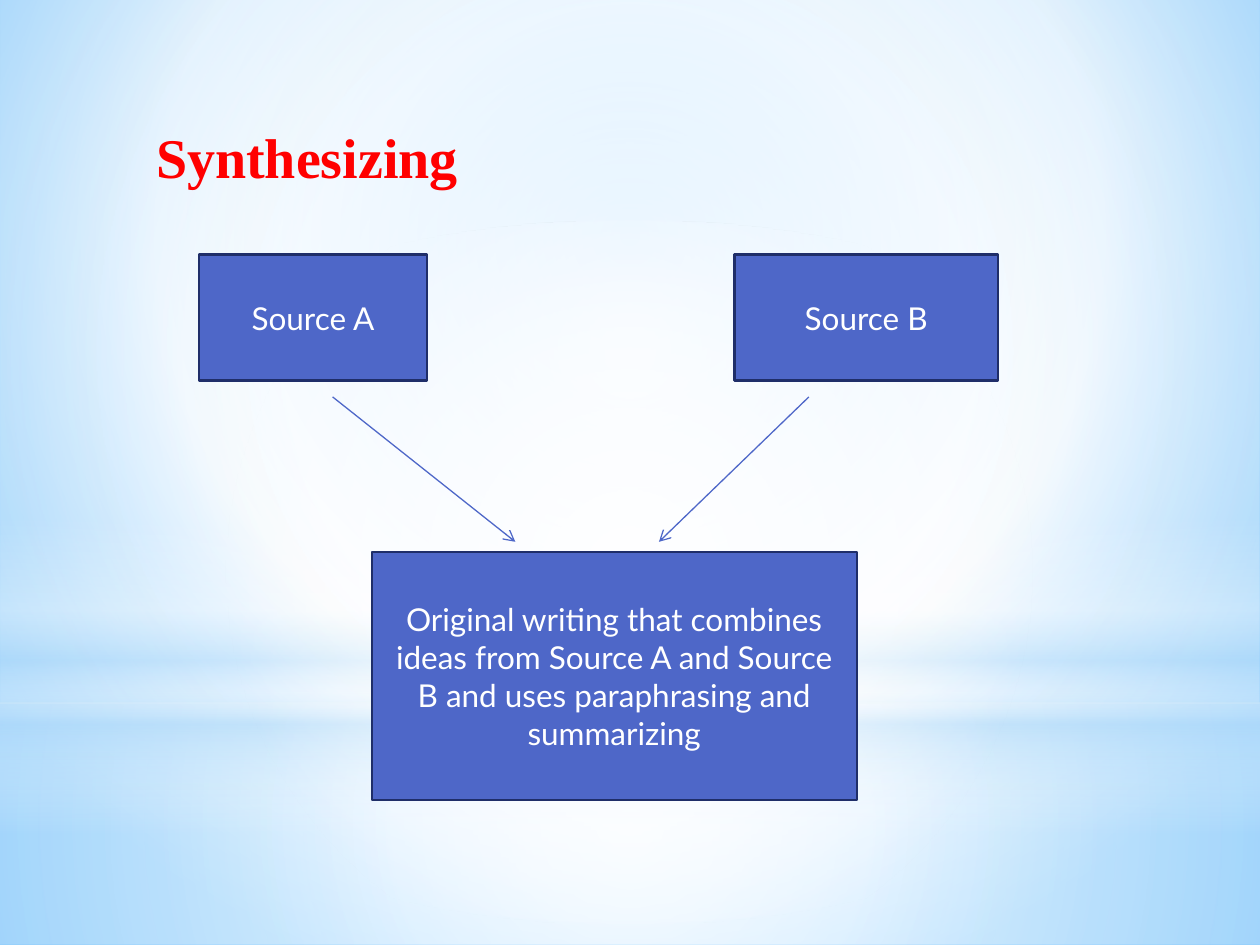
from typing import NamedTuple

from lxml.etree import SubElement
from pptx import Presentation
from pptx.dml.color import RGBColor
from pptx.dml.fill import FillFormat
from pptx.enum.shapes import MSO_CONNECTOR, MSO_SHAPE
from pptx.enum.text import MSO_ANCHOR, MSO_AUTO_SIZE, PP_ALIGN
from pptx.oxml.ns import qn
from pptx.slide import Slide
from pptx.text.text import TextFrame
from pptx.util import Pt

WIDTH, HEIGHT = 720, 540
WHITE = RGBColor(0xFF, 0xFF, 0xFF)
RED = RGBColor(0xFF, 0x00, 0x00)
INDIGO = RGBColor(0x4E, 0x67, 0xC8)
NAVY = RGBColor(0x1F, 0x2E, 0x69)
PALE_BLUE = RGBColor(0xB4, 0xDC, 0xFA)
SKY_BLUE = RGBColor(0x9E, 0xD5, 0xFF)
DEEP_SKY = RGBColor(0x5B, 0xB9, 0xFF)


class Stop(NamedTuple):
    position: int
    color: RGBColor
    opacity: int = 100


class Gradient(NamedTuple):
    stops: list[Stop]
    focus: tuple[int, int, int, int] | None = (50, 50, 50, 50)


class Glow(NamedTuple):
    kind: MSO_SHAPE
    top: float
    height: float
    gradient: Gradient


class Box(NamedTuple):
    text: str
    left: float
    top: float
    width: float
    height: float


class Arrow(NamedTuple):
    start_x: float
    start_y: float
    end_x: float
    end_y: float


BACKGROUND = Gradient(
    [Stop(0, SKY_BLUE), Stop(60, WHITE), Stop(100, DEEP_SKY)], (20, 10, 20, 60)
)
GLOWS = [
    Glow(MSO_SHAPE.RECTANGLE, 401.76, 138.24, Gradient(
        [Stop(0, WHITE, 91), Stop(37, WHITE, 76), Stop(100, PALE_BLUE, 79)])),
    Glow(MSO_SHAPE.RECTANGLE, 0, 401.76, Gradient(
        [Stop(0, WHITE, 89), Stop(48, WHITE, 62), Stop(100, PALE_BLUE, 79)])),
    Glow(MSO_SHAPE.RECTANGLE, 296.64, 180, Gradient(
        [Stop(0, WHITE, 0), Stop(29, WHITE, 30), Stop(45, PALE_BLUE, 40),
         Stop(55, WHITE, 26), Stop(65, PALE_BLUE, 60), Stop(100, WHITE, 0)], None)),
    Glow(MSO_SHAPE.OVAL, 126, 401.76, Gradient([Stop(0, WHITE), Stop(56, WHITE, 0)])),
]
BOXES = [
    Box("Source A", 113.76, 145.44, 130.32, 72),
    Box("Source B", 419.76, 145.44, 150.48, 72),
    Box("Original writing that combines ideas from Source A and Source B "
        "and uses paraphrasing and summarizing", 212.4, 315.36, 277.2, 141.84),
]
ARROWS = [
    Arrow(190.08, 226.8, 294.48, 309.6),
    Arrow(462.24, 226.8, 376.56, 309.6),
]


def apply_gradient(fill: FillFormat, owner, gradient: Gradient) -> None:
    fill.gradient()
    element = next(owner.iter(qn("a:gradFill")))
    for child in list(element):
        element.remove(child)
    stop_list = SubElement(element, qn("a:gsLst"))
    for stop in gradient.stops:
        entry = SubElement(stop_list, qn("a:gs"), pos=str(stop.position * 1000))
        color = SubElement(entry, qn("a:srgbClr"), val=str(stop.color))
        if stop.opacity < 100:
            SubElement(color, qn("a:alpha"), val=str(stop.opacity * 1000))
    if gradient.focus is None:
        SubElement(element, qn("a:lin"), ang="5400000", scaled="0")
        return
    circle = SubElement(element, qn("a:path"), {"path": "circle"})
    sides = {side: str(value * 1000) for side, value in zip("ltrb", gradient.focus)}
    SubElement(circle, qn("a:fillToRect"), sides)


def write_text(frame: TextFrame, text: str, font_name: str, size: float,
               color: RGBColor, bold: bool = False) -> None:
    frame.text = text
    font = frame.paragraphs[0].runs[0].font
    font.name = font_name
    font.size = Pt(size)
    font.bold = bold
    font.color.rgb = color


def draw_glow(slide: Slide, glow: Glow) -> None:
    shape = slide.shapes.add_shape(
        glow.kind, Pt(0), Pt(glow.top), Pt(WIDTH), Pt(glow.height))
    shape.shadow.inherit = False
    shape.line.fill.background()
    apply_gradient(shape.fill, shape.element, glow.gradient)


def draw_title(slide: Slide) -> None:
    title = slide.shapes.add_textbox(Pt(82.08), Pt(66.24), Pt(193.68), Pt(46.08))
    frame = title.text_frame
    frame.word_wrap = False
    frame.auto_size = MSO_AUTO_SIZE.SHAPE_TO_FIT_TEXT
    write_text(frame, "Synthesizing", "Times New Roman", 32, RED, bold=True)


def draw_box(slide: Slide, box: Box) -> None:
    shape = slide.shapes.add_shape(
        MSO_SHAPE.RECTANGLE, Pt(box.left), Pt(box.top), Pt(box.width), Pt(box.height))
    shape.shadow.inherit = False
    shape.fill.solid()
    shape.fill.fore_color.rgb = INDIGO
    shape.line.color.rgb = NAVY
    shape.line.width = Pt(1.25)
    frame = shape.text_frame
    frame.word_wrap = True
    frame.vertical_anchor = MSO_ANCHOR.MIDDLE
    write_text(frame, box.text, "Lato", 18, WHITE)
    frame.paragraphs[0].alignment = PP_ALIGN.CENTER


def draw_arrow(slide: Slide, arrow: Arrow) -> None:
    connector = slide.shapes.add_connector(
        MSO_CONNECTOR.STRAIGHT, *(Pt(length) for length in arrow))
    connector.line.color.rgb = INDIGO
    connector.line.width = Pt(0.75)
    properties = connector.element.spPr
    SubElement(properties.find(qn("a:ln")), qn("a:tailEnd"), type="arrow")
    SubElement(properties, qn("a:effectLst"))


def main() -> None:
    presentation = Presentation()
    presentation.slide_width = Pt(WIDTH)
    presentation.slide_height = Pt(HEIGHT)
    slide = presentation.slides.add_slide(presentation.slide_layouts[6])
    apply_gradient(slide.background.fill, slide.element, BACKGROUND)
    for glow in GLOWS:
        draw_glow(slide, glow)
    draw_title(slide)
    for box in BOXES:
        draw_box(slide, box)
    for arrow in ARROWS:
        draw_arrow(slide, arrow)
    presentation.save("out.pptx")


if __name__ == "__main__":
    main()
